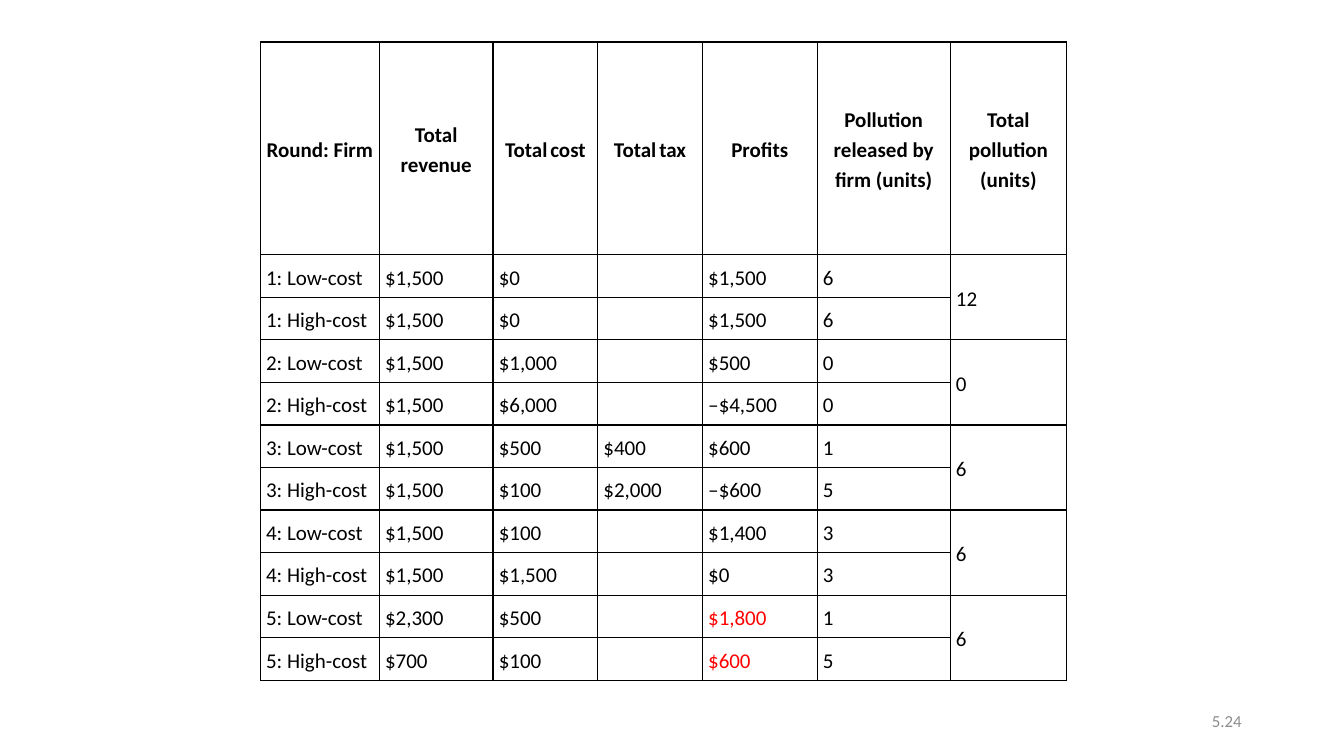
"""Build the slide with the table of costs, profits and pollution by round and firm."""
from lxml import etree
from pptx import Presentation
from pptx.dml.color import RGBColor
from pptx.enum import text
from pptx.oxml import ns
from pptx.util import Pt

BLACK = RGBColor(0, 0, 0)
RED = RGBColor(255, 0, 0)
GREY = RGBColor(0x8C, 0x8C, 0x8C)
FONT = "Calibri"
COLUMN_WIDTHS = [85, 81.2, 74.8, 74.8, 82, 95, 83.2]
HEADER_HEIGHT = 152
ROW_HEIGHT = 30.4
PROFITS = 4
POLLUTION = 6
SMALL_SPACE_COLUMNS = (1, 2, 3)

headings = ["Round: Firm", "Total revenue", "Total cost", "Total tax", "Profits",
            "Pollution released by firm (units)", "Total pollution (units)"]
results = [
    ["1: Low-cost", "$1,500", "$0", "", "$1,500", "6", "12"],
    ["1: High-cost", "$1,500", "$0", "", "$1,500", "6", ""],
    ["2: Low-cost", "$1,500", "$1,000", "", "$500", "0", "0"],
    ["2: High-cost", "$1,500", "$6,000", "", "‒$4,500", "0", ""],
    ["3: Low-cost", "$1,500", "$500", "$400", "$600", "1", "6"],
    ["3: High-cost", "$1,500", "$100", "$2,000", "‒$600", "5", ""],
    ["4: Low-cost", "$1,500", "$100", "", "$1,400", "3", "6"],
    ["4: High-cost", "$1,500", "$1,500", "", "$0", "3", ""],
    ["5: Low-cost", "$2,300", "$500", "", "$1,800", "1", "6"],
    ["5: High-cost", "$700", "$100", "", "$600", "5", ""],
]


def set_font(font, size, color, bold=False):
    font.name = FONT
    font.size = Pt(size)
    font.bold = bold
    font.color.rgb = color


def add_borders(cell):
    properties = cell._tc.get_or_add_tcPr()
    for side in ("lnL", "lnR", "lnT", "lnB"):
        line = etree.SubElement(properties, ns.qn(f"a:{side}"), w=str(Pt(1)))
        fill = etree.SubElement(line, ns.qn("a:solidFill"))
        etree.SubElement(fill, ns.qn("a:srgbClr"), val=str(BLACK))


presentation = Presentation()
presentation.slide_width = Pt(960)
presentation.slide_height = Pt(540)
slide = presentation.slides.add_slide(presentation.slide_layouts[6])

table_height = HEADER_HEIGHT + ROW_HEIGHT * len(results)
rounds = slide.shapes.add_table(len(results) + 1, len(headings), Pt(186), Pt(30),
                                Pt(sum(COLUMN_WIDTHS)), Pt(table_height)).table
rounds.first_row = False
rounds.horz_banding = False
for column, width in zip(rounds.columns, COLUMN_WIDTHS):
    column.width = Pt(width)
for row in rounds.rows:
    row.height = Pt(ROW_HEIGHT)
rounds.rows[0].height = Pt(HEADER_HEIGHT)

for row, values in enumerate([headings] + results):
    for column, value in enumerate(values):
        cell = rounds.cell(row, column)
        add_borders(cell)
        cell.fill.background()
        cell.vertical_anchor = text.MSO_ANCHOR.MIDDLE
        cell.margin_left = cell.margin_right = Pt(4.1)
        cell.margin_top = cell.margin_bottom = 0
        entry = cell.text_frame.paragraphs[0]
        entry.line_spacing = 1.15
        entry.space_after = Pt(10)
        is_heading = row == 0
        is_last_round = values[0].startswith("5:")
        color = RED if is_last_round and column == PROFITS else BLACK
        set_font(entry.font, 15, color, is_heading)
        if is_heading:
            entry.alignment = text.PP_ALIGN.CENTER
        if is_heading and column in SMALL_SPACE_COLUMNS:
            first, space, last = value.partition(" ")
            for part, size in ((first, 15), (space, 9), (last, 15)):
                run = entry.add_run()
                run.text = part
                run.font.size = Pt(size)
        elif value:
            entry.add_run().text = value

for row in range(1, len(results), 2):
    rounds.cell(row, POLLUTION).merge(rounds.cell(row + 1, POLLUTION))

page_number = slide.shapes.add_textbox(Pt(678), Pt(500.5), Pt(216), Pt(28.75)).text_frame
page_number.word_wrap = True
page_number.vertical_anchor = text.MSO_ANCHOR.MIDDLE
number = page_number.paragraphs[0]
number.text = "5.24"
number.alignment = text.PP_ALIGN.RIGHT
set_font(number.font, 12, GREY)

presentation.save("out.pptx")
